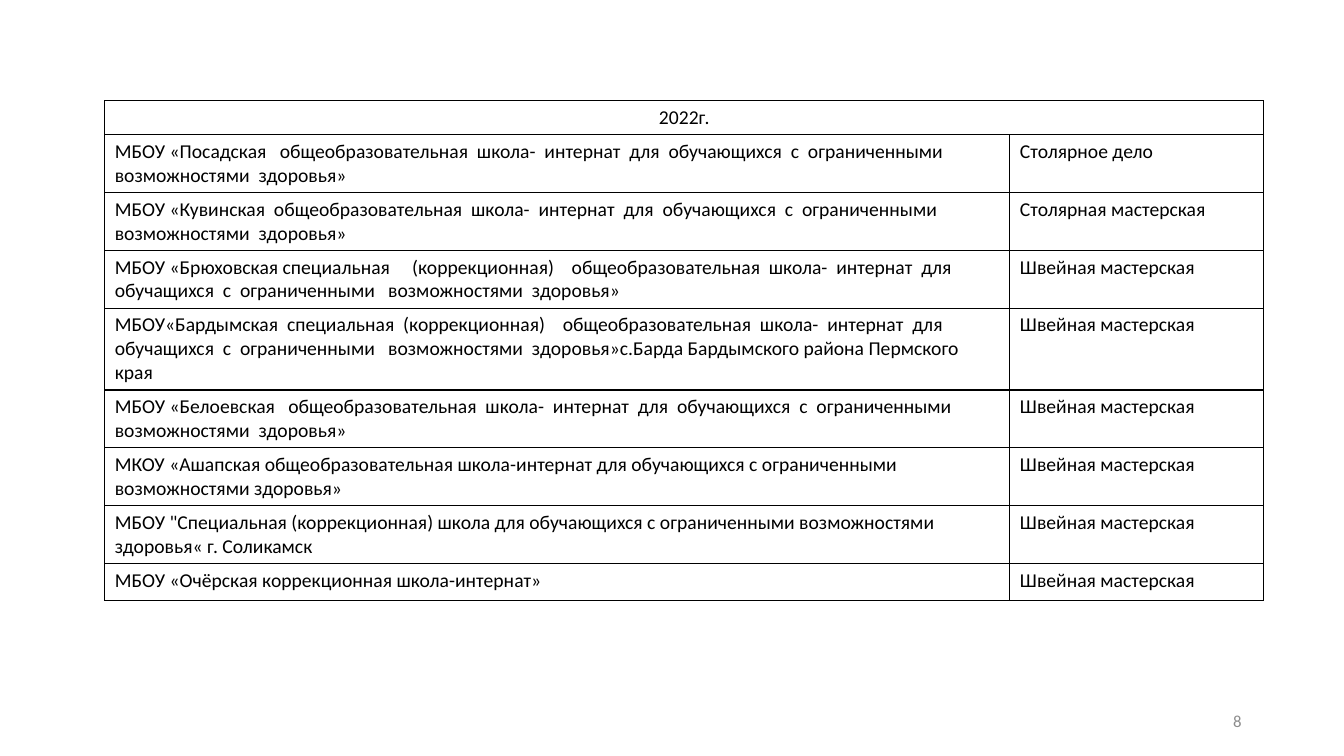
from dataclasses import dataclass

from lxml import etree
from pptx import Presentation
from pptx import util as u
from pptx.dml.color import RGBColor
from pptx.enum import text
from pptx.oxml import ns

COLOURS = {"ink": "000000", "paper": "FFFFFF", "number": "8C8C8C"}
FONT = "Calibri"
COLUMN_WIDTHS = (22.81, 6.4)
HEADER_HEIGHT, ROW_HEIGHT = 0.76, 0.94
BORDER_SIDES = ("lnL", "lnR", "lnT", "lnB")


@dataclass(frozen=True)
class Workshop:
    school: str
    trade: str = "Швейная мастерская"


YEAR = "2022г."
WORKSHOPS = (
    Workshop("МБОУ «Посадская   общеобразовательная  школа-  интернат  для  обучающихся  с  ограниченными   возможностями  здоровья»", "Столярное дело"),
    Workshop("МБОУ «Кувинская  общеобразовательная  школа-  интернат  для  обучающихся  с  ограниченными   возможностями  здоровья»", "Столярная мастерская"),
    Workshop("МБОУ «Брюховская специальная     (коррекционная)    общеобразовательная  школа-  интернат  для обучащихся  с  ограниченными   возможностями  здоровья»"),
    Workshop("МБОУ«Бардымская  специальная  (коррекционная)    общеобразовательная  школа-  интернат  для обучащихся  с  ограниченными   возможностями  здоровья»с.Барда Бардымского района Пермского края"),
    Workshop("МБОУ «Белоевская   общеобразовательная  школа-  интернат  для  обучающихся  с  ограниченными   возможностями  здоровья»"),
    Workshop("МКОУ «Ашапская общеобразовательная школа-интернат для обучающихся с ограниченными возможностями здоровья»"),
    Workshop("МБОУ \"Специальная (коррекционная) школа для обучающихся с ограниченными возможностями здоровья« г. Соликамск"),
    Workshop("МБОУ «Очёрская коррекционная школа-интернат»"),
)


def write(frame, words: str, size: int, colour: str, align) -> None:
    para = frame.paragraphs[0]
    para.text = words
    para.alignment = align
    para.font.name = FONT
    para.font.size = u.Pt(size)
    para.font.color.rgb = RGBColor.from_string(COLOURS[colour])


def frame_cell(cell) -> None:
    properties = cell._tc.get_or_add_tcPr()
    for side in BORDER_SIDES:
        line = etree.SubElement(properties, ns.qn(f"a:{side}"), w=str(u.Pt(1)))
        fill = etree.SubElement(line, ns.qn("a:solidFill"))
        etree.SubElement(fill, ns.qn("a:srgbClr"), val=COLOURS["ink"])
    cell.fill.solid()
    cell.fill.fore_color.rgb = RGBColor.from_string(COLOURS["paper"])


def add_workshop_table(page) -> None:
    height = HEADER_HEIGHT + ROW_HEIGHT * len(WORKSHOPS)
    table = page.shapes.add_table(
        len(WORKSHOPS) + 1, len(COLUMN_WIDTHS),
        u.Cm(2.64), u.Cm(2.54), u.Cm(sum(COLUMN_WIDTHS)), u.Cm(height),
    ).table
    table.first_row = False
    table.horz_banding = False
    for column, width in zip(table.columns, COLUMN_WIDTHS):
        column.width = u.Cm(width)
    for row in table.rows:
        row.height = u.Cm(ROW_HEIGHT)
    table.rows[0].height = u.Cm(HEADER_HEIGHT)
    for cell in table.iter_cells():
        frame_cell(cell)

    header = table.cell(0, 0)
    header.merge(table.cell(0, 1))
    write(header.text_frame, YEAR, 14, "ink", text.PP_ALIGN.CENTER)
    for index, workshop in enumerate(WORKSHOPS, start=1):
        for column, words in enumerate((workshop.school, workshop.trade)):
            write(table.cell(index, column).text_frame, words, 14, "ink", text.PP_ALIGN.LEFT)


def add_page_number(page, number: int) -> None:
    box = page.shapes.add_textbox(u.Cm(23.92), u.Cm(17.65), u.Cm(7.62), u.Cm(1.01))
    frame = box.text_frame
    frame.word_wrap = True
    frame.vertical_anchor = text.MSO_ANCHOR.MIDDLE
    write(frame, str(number), 12, "number", text.PP_ALIGN.RIGHT)


def main() -> None:
    deck = Presentation()
    deck.slide_width, deck.slide_height = u.Cm(33.87), u.Cm(19.05)
    page = deck.slides.add_slide(deck.slide_layouts[6])
    add_workshop_table(page)
    add_page_number(page, 8)
    deck.save("out.pptx")


if __name__ == "__main__":
    main()
